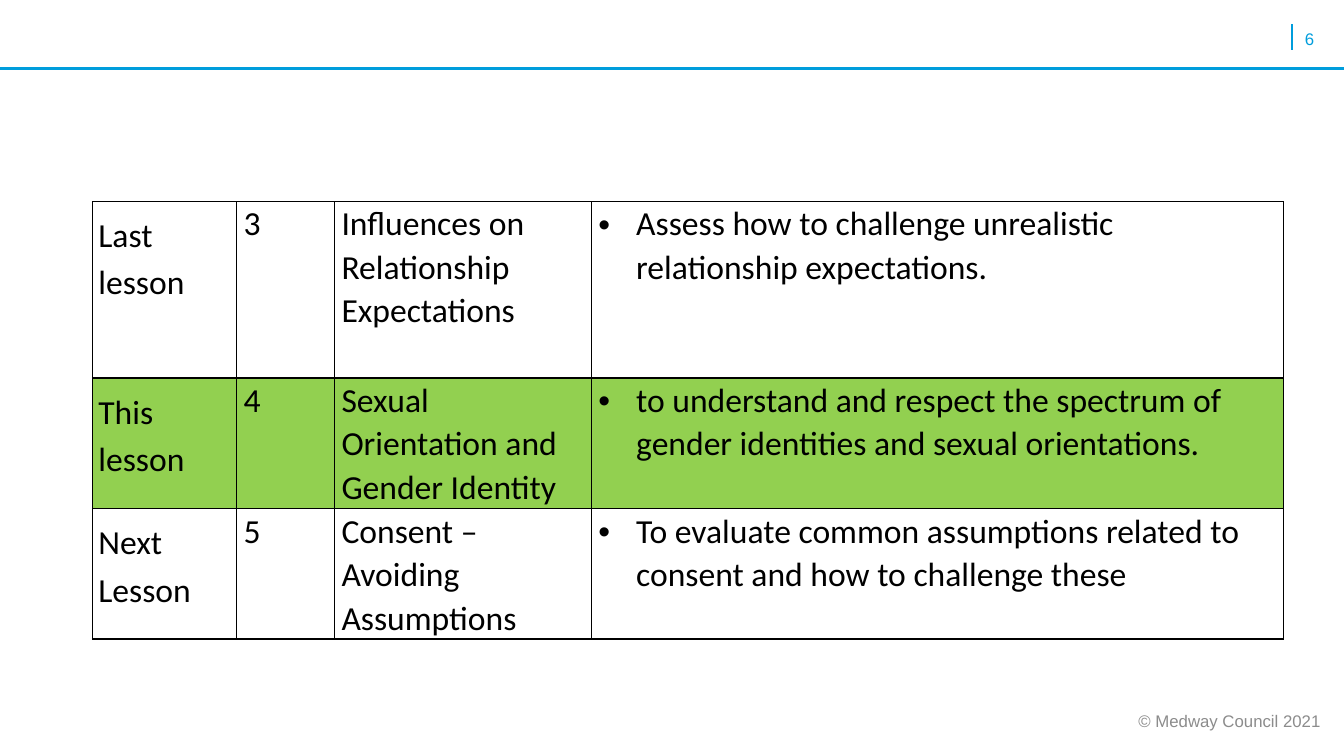
from lxml.etree import SubElement
from pptx import Presentation
from pptx.dml.color import RGBColor
from pptx.enum.shapes import MSO_CONNECTOR as Connector
from pptx.enum.text import MSO_ANCHOR as Anchor, PP_ALIGN as Align
from pptx.oxml.ns import qn
from pptx.util import Pt

# Content
LESSONS = [
    ("Last lesson", "3", "Influences on Relationship Expectations",
     "Assess how to challenge unrealistic relationship expectations."),
    ("This lesson", "4", "Sexual Orientation and Gender Identity",
     "to understand and respect the spectrum of gender identities and sexual orientations."),
    ("Next Lesson", "5", "Consent – Avoiding Assumptions",
     "To evaluate common assumptions related to consent and how to challenge these"),
]
PAGE_NUMBER = "6"
COPYRIGHT = "© Medway Council 2021"

# Layout in points
WIDTH, HEIGHT = 960, 540
TABLE_LEFT, TABLE_TOP = 66, 144
COLUMN_WIDTHS = [103, 70, 183.5, 494.5]
ROW_HEIGHTS = [126, 93.5, 93]
ROW_FILLS = ["FFFFFF", "92D050", "FFFFFF"]
BLUE, GREY, BLACK = "009DDC", "8C8C8C", "000000"
BULLET_INDENT = 27


def color(value):
    return RGBColor.from_string(value)


def style_font(para, name, size, value):
    para.font.name = name
    para.font.size = Pt(size)
    para.font.color.rgb = color(value)


def add_rule(page, x1, y1, x2, y2, weight):
    rule = page.shapes.add_connector(Connector.STRAIGHT, Pt(x1), Pt(y1), Pt(x2), Pt(y2))
    rule.line.color.rgb = color(BLUE)
    rule.line.width = Pt(weight)
    SubElement(rule._element.spPr, qn("a:effectLst"))


def add_label(page, text, left, top, width, height, value, align, anchor):
    box = page.shapes.add_textbox(Pt(left), Pt(top), Pt(width), Pt(height))
    frame = box.text_frame
    frame.word_wrap = True
    frame.vertical_anchor = anchor
    para = frame.paragraphs[0]
    para.text = text
    para.alignment = align
    style_font(para, "Arial", 12, value)


def add_borders(cell):
    properties = cell._tc.get_or_add_tcPr()
    for position, side in enumerate(("lnL", "lnR", "lnT", "lnB")):
        border = SubElement(properties, qn(f"a:{side}"), w=str(Pt(1)))
        fill = SubElement(border, qn("a:solidFill"))
        SubElement(fill, qn("a:srgbClr"), val=BLACK)
        properties.insert(position, border)  # borders come before the fill


def add_bullet(para):
    properties = para._p.get_or_add_pPr()
    properties.set("marL", str(Pt(BULLET_INDENT)))
    properties.set("indent", str(-Pt(BULLET_INDENT)))
    SubElement(properties, qn("a:buFont"), typeface="Arial")
    SubElement(properties, qn("a:buChar"), char="•")


def fill_cell(cell, text, column, fill):
    is_heading = column == 0
    cell.fill.solid()
    cell.fill.fore_color.rgb = color(fill)
    add_borders(cell)
    cell.margin_left = cell.margin_right = Pt(4.3 if is_heading else 5)
    cell.margin_top = cell.margin_bottom = Pt(5.8 if is_heading else 0)
    para = cell.text_frame.paragraphs[0]
    para.text = text
    para.line_spacing = 1.15 if is_heading else 1.06
    if column == len(COLUMN_WIDTHS) - 1:
        add_bullet(para)
    style_font(para, "Calibri", 24, BLACK)


def main():
    deck = Presentation()
    deck.slide_width, deck.slide_height = Pt(WIDTH), Pt(HEIGHT)
    page = deck.slides.add_slide(deck.slide_layouts[6])

    # Header and footer
    add_rule(page, 923, 17.3, 923, 36, 1.5)
    add_rule(page, 0, 49, WIDTH, 49, 2.25)
    add_label(page, PAGE_NUMBER, 925, 17.3, 30, 18.7, BLUE, Align.LEFT, Anchor.TOP)
    add_label(page, COPYRIGHT, 782, 500.4, 168.5, 28.8, GREY, Align.RIGHT, Anchor.MIDDLE)

    # Lesson table
    table = page.shapes.add_table(
        len(LESSONS), len(COLUMN_WIDTHS), Pt(TABLE_LEFT), Pt(TABLE_TOP),
        Pt(sum(COLUMN_WIDTHS)), Pt(sum(ROW_HEIGHTS))).table
    table.first_row = table.horz_banding = False
    for column, width in zip(table.columns, COLUMN_WIDTHS):
        column.width = Pt(width)
    for index, (lesson, height, fill) in enumerate(zip(LESSONS, ROW_HEIGHTS, ROW_FILLS)):
        table.rows[index].height = Pt(height)
        for column, text in enumerate(lesson):
            fill_cell(table.cell(index, column), text, column, fill)

    deck.save("out.pptx")


if __name__ == "__main__":
    main()
